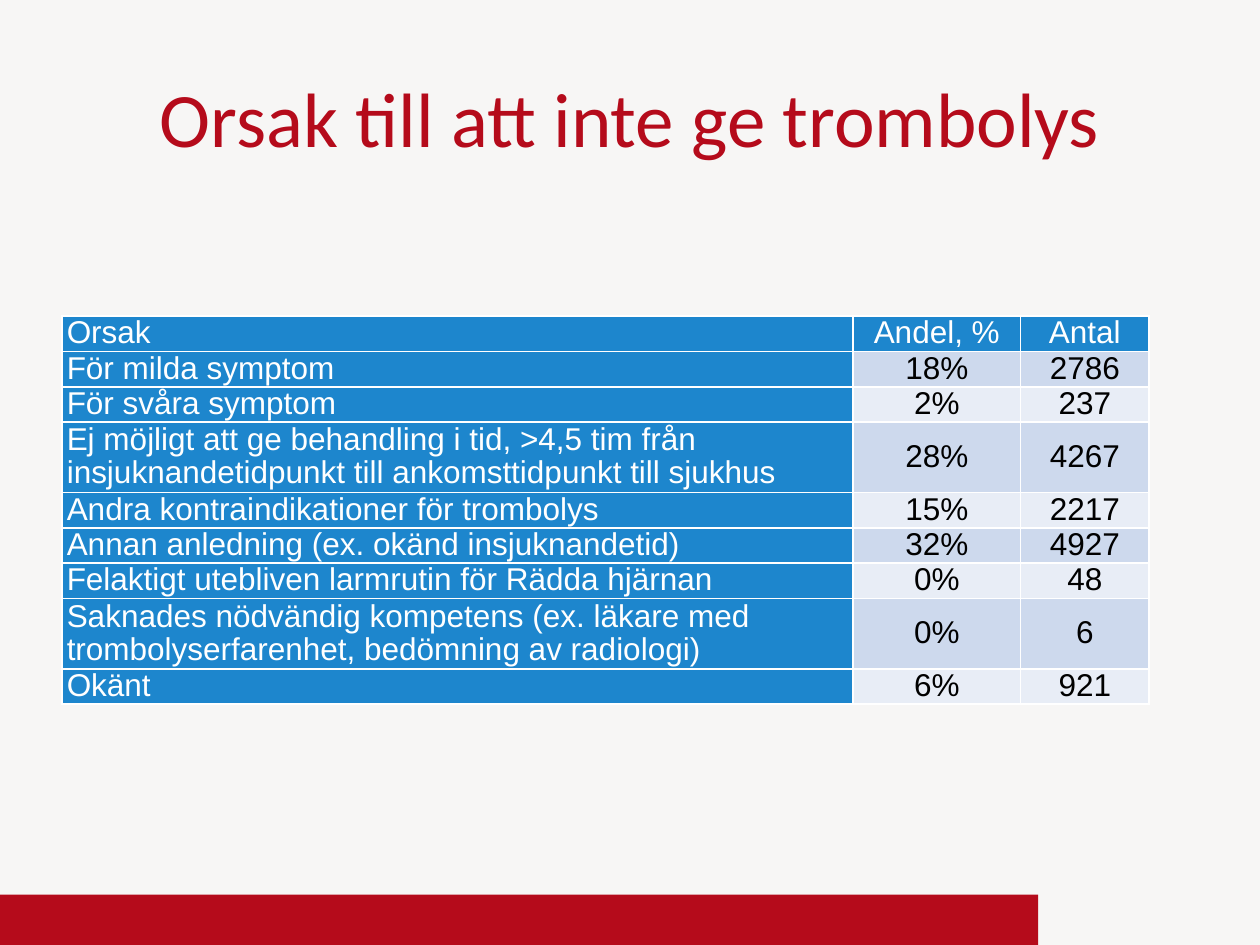
from pptx import Presentation
from pptx.dml.color import RGBColor as RGB
from pptx.enum.shapes import MSO_SHAPE as Shape
from pptx.enum.text import MSO_ANCHOR as Anchor, PP_ALIGN as Align
from pptx.util import Inches, Pt

TITLE = "Orsak till att inte ge trombolys"
ROWS = [
    ("Orsak", "Andel, %", "Antal"),
    ("För milda symptom", "18%", "2786"),
    ("För svåra symptom", "2%", "237"),
    ("Ej möjligt att ge behandling i tid, >4,5 tim från "
     "insjuknandetidpunkt till ankomsttidpunkt till sjukhus", "28%", "4267"),
    ("Andra kontraindikationer för trombolys", "15%", "2217"),
    ("Annan anledning (ex. okänd insjuknandetid)", "32%", "4927"),
    ("Felaktigt utebliven larmrutin för Rädda hjärnan", "0%", "48"),
    ("Saknades nödvändig kompetens (ex. läkare med "
     "trombolyserfarenhet, bedömning av radiologi)", "0%", "6"),
    ("Okänt", "6%", "921"),
]
WIDTHS = [6.28, 1.33, 1.02]
LINE = 0.28
WRAP = 60
COLORS = {
    "back": "F7F6F5", "red": "B50B1B", "blue": "1D86CD", "dark": "CDD9ED",
    "light": "E8EDF6", "white": "FFFFFF", "black": "000000",
}


def paint(fill, name):
    """Fill with a solid named colour."""
    fill.solid()
    fill.fore_color.rgb = RGB.from_string(COLORS[name])


def style(part, font, size, name):
    """Set the font of every run in a paragraph."""
    for run in part.runs:
        run.font.name = font
        run.font.size = Pt(size)
        run.font.bold = False
        run.font.color.rgb = RGB.from_string(COLORS[name])


def add_bar(slide):
    """Draw the red bar at the foot of the slide."""
    bar = slide.shapes.add_shape(
        Shape.RECTANGLE, 0, Inches(7.1), Inches(8.24), Inches(0.4))
    bar.shadow.inherit = False
    paint(bar.fill, "red")
    bar.line.fill.background()


def add_title(slide):
    """Place and format the title."""
    title = slide.shapes.title
    title.left, title.top = Inches(0.5), Inches(0.3)
    title.width, title.height = Inches(9), Inches(1.25)
    frame = title.text_frame
    frame.text = TITLE
    frame.vertical_anchor = Anchor.MIDDLE
    part = frame.paragraphs[0]
    part.alignment = Align.CENTER
    style(part, "Calibri", 44, "red")


def fill_cell(cell, text, row, col):
    """Write one cell with the look of its row and column."""
    head = row == 0 or col == 0
    paint(cell.fill, "blue" if head else "dark" if row % 2 else "light")
    cell.margin_left = cell.margin_right = Inches(0.04)
    cell.margin_top = cell.margin_bottom = 0
    cell.vertical_anchor = Anchor.MIDDLE
    cell.text_frame.text = text
    part = cell.text_frame.paragraphs[0]
    part.alignment = Align.CENTER if col else Align.LEFT
    part.line_spacing = 0.94
    part.space_after = Pt(14)
    style(part, "Arial", 18, "white" if head else "black")


def add_grid(slide):
    """Build the table of causes."""
    lines = [2 if len(row[0]) > WRAP else 1 for row in ROWS]
    grid = slide.shapes.add_table(
        len(ROWS), len(WIDTHS), Inches(0.49), Inches(2.51),
        Inches(sum(WIDTHS)), Inches(LINE * sum(lines))).table
    for col, width in zip(grid.columns, WIDTHS):
        col.width = Inches(width)
    for r, (row, count) in enumerate(zip(ROWS, lines)):
        grid.rows[r].height = Inches(LINE * count)
        for c, text in enumerate(row):
            fill_cell(grid.cell(r, c), text, r, c)


def main():
    """Build and save the slide."""
    deck = Presentation()
    deck.slide_width, deck.slide_height = Inches(10), Inches(7.5)
    slide = deck.slides.add_slide(deck.slide_layouts[5])
    paint(slide.background.fill, "back")
    add_bar(slide)
    add_title(slide)
    add_grid(slide)
    deck.save("out.pptx")


if __name__ == "__main__":
    main()
